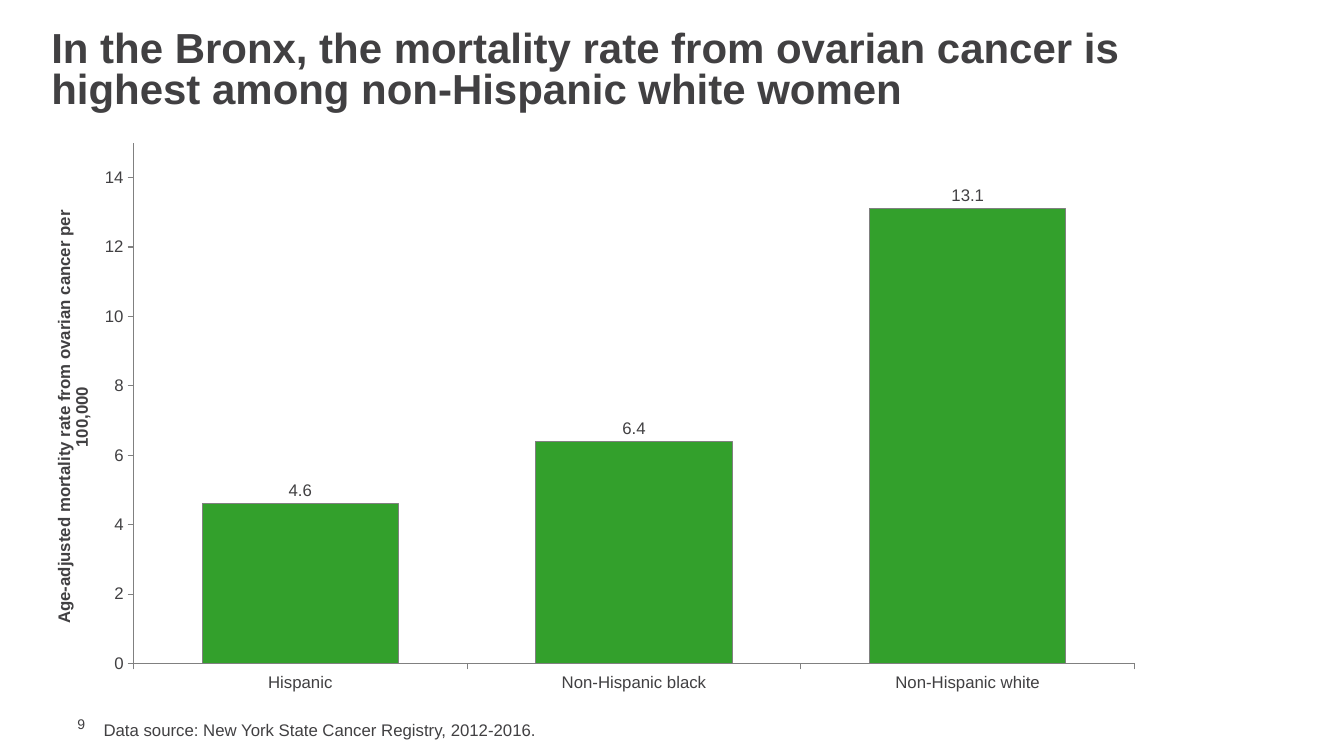
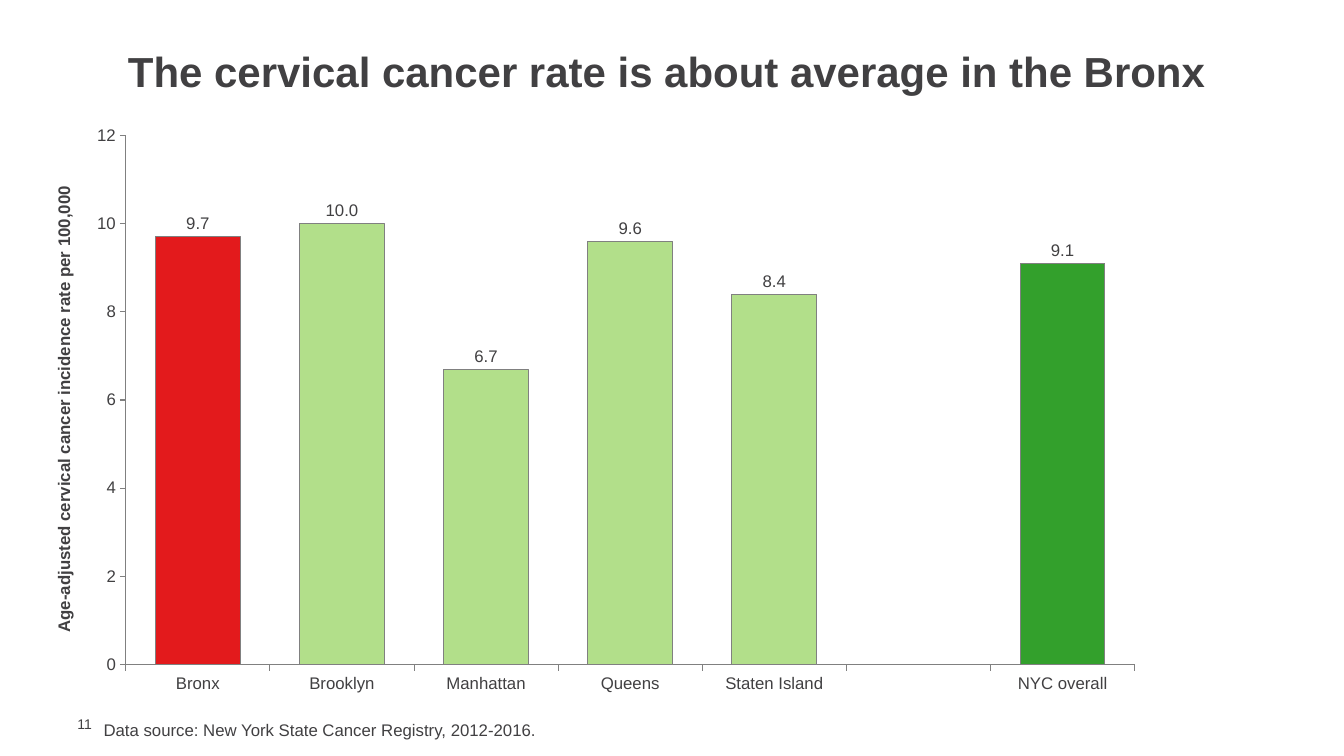
from pptx import Presentation
from pptx import util as u
from pptx.chart.data import CategoryChartData
from pptx.dml.color import RGBColor
from pptx.enum import chart as ch, text
from pptx.oxml import parse_xml
from pptx.oxml.ns import nsdecls, qn

INK = RGBColor(0x41, 0x40, 0x42)
GREY = RGBColor(0x80, 0x80, 0x80)
GREEN = RGBColor(0x33, 0xA0, 0x2C)
LIGHT_GREEN = RGBColor(0xB2, 0xDF, 0x8A)
RED = RGBColor(0xE3, 0x1A, 0x1C)
FONT = "Arial"
TITLE_ONLY = 5
SOURCE = "Data source: New York State Cancer Registry, 2012-2016."


class RateDeck:
    def __init__(self):
        self.deck = Presentation()
        self.deck.slide_width, self.deck.slide_height = u.Cm(33.87), u.Cm(19.05)
        self.page = None

    def style(self, font, size, bold=False):
        font.name, font.size, font.bold = FONT, u.Pt(size), bold
        font.color.rgb = INK

    def outline(self, line):
        line.color.rgb = GREY
        line.width = u.Pt(0.75)

    def fill_text(self, box, words, size, bold=False):
        frame = box.text_frame
        frame.word_wrap = True
        frame.auto_size = text.MSO_AUTO_SIZE.NONE
        para = frame.paragraphs[0]
        para.alignment = text.PP_ALIGN.LEFT
        span = para.add_run()
        span.text = words
        self.style(span.font, size, bold)
        return frame

    def text_box(self, words, place, size):
        box = self.page.shapes.add_textbox(*map(u.Cm, place))
        return self.fill_text(box, words, size)

    def start_page(self, number, title, title_place):
        """Add a page with its title, page number and data source."""
        layout = self.deck.slide_layouts[TITLE_ONLY]
        self.page = self.deck.slides.add_slide(layout)
        box = self.page.shapes.title
        box.left, box.top, box.width, box.height = map(u.Cm, title_place)
        frame = self.fill_text(box, title, 30, bold=True)
        frame.vertical_anchor = text.MSO_ANCHOR.MIDDLE
        frame.paragraphs[0].line_spacing = 0.8

        frame = self.text_box(str(number), (1.7, 18.03, 1.09, 0.43), 10)
        frame.vertical_anchor = text.MSO_ANCHOR.MIDDLE
        frame.margin_top = frame.margin_right = frame.margin_bottom = 0
        self.text_box(SOURCE, (2.36, 18.01, 25.2, 0.76), 12)

    def column_chart(self, axis_title, rates, top, plot_area, color, accents=None):
        """Draw the rates; accents maps a category to its own bar colour."""
        data = CategoryChartData(number_format="0.0")
        data.categories = list(rates)
        data.add_series("Series 1", list(rates.values()))
        chart = self.page.shapes.add_chart(
            ch.XL_CHART_TYPE.COLUMN_CLUSTERED,
            u.Cm(1.27), u.Cm(3.18), u.Cm(27.94), u.Cm(14.53), data).chart
        chart.has_legend = chart.has_title = False
        self.style(chart.font, 10)
        self.axes(chart, axis_title, top)
        self.place_plot(chart, plot_area)

        plot = chart.plots[0]
        plot.gap_width = 70
        plot.vary_by_categories = False
        series = plot.series[0]
        self.paint(series, color)
        for name, accent in (accents or {}).items():
            self.paint(series.points[list(rates).index(name)], accent)
        labels = series.data_labels
        labels.show_value = True
        labels.number_format, labels.number_format_is_linked = "0.0", False
        labels.position = ch.XL_LABEL_POSITION.OUTSIDE_END
        self.style(labels.font, 12)

    def paint(self, bar, color):
        bar.format.fill.solid()
        bar.format.fill.fore_color.rgb = color
        self.outline(bar.format.line)

    def axes(self, chart, axis_title, top):
        for axis in (chart.category_axis, chart.value_axis):
            axis.has_major_gridlines = False
            axis.major_tick_mark = ch.XL_TICK_MARK.OUTSIDE
            axis.minor_tick_mark = ch.XL_TICK_MARK.NONE
            self.outline(axis.format.line)
            self.style(axis.tick_labels.font, 12)
        axis = chart.value_axis
        axis.minimum_scale, axis.maximum_scale, axis.major_unit = 0, top, 2
        axis.tick_labels.number_format = "0"
        axis.tick_labels.number_format_is_linked = False
        span = axis.axis_title.text_frame.paragraphs[0].add_run()
        span.text = axis_title
        self.style(span.font, 12, bold=True)

    def place_plot(self, chart, plot_area):
        """Fix the inner plot area, given as fractions of the chart."""
        area = chart.element.find(".//" + qn("c:plotArea"))
        for old in area.findall(qn("c:layout")):
            area.remove(old)
        sizes = "".join(f'<c:{tag} val="{part}"/>'
                        for tag, part in zip("xywh", plot_area))
        area.insert(0, parse_xml(
            f'<c:layout {nsdecls("c")}><c:manualLayout>'
            '<c:layoutTarget val="inner"/><c:xMode val="edge"/>'
            f'<c:yMode val="edge"/>{sizes}</c:manualLayout></c:layout>'))


def main():
    rates = RateDeck()
    rates.start_page(
        9, "In the Bronx, the mortality rate from ovarian cancer is "
        "highest among non-Hispanic white women", (1.04, 0.66, 29.85, 2.31))
    rates.column_chart(
        "Age-adjusted mortality rate from ovarian cancer per 100,000",
        {"Hispanic": 4.6, "Non-Hispanic black": 6.4, "Non-Hispanic white": 13.1},
        15, (0.075, 0.029, 0.903, 0.903), GREEN)

    rates.start_page(
        11, "The cervical cancer rate is about average in the Bronx",
        (2.97, 1.27, 27.94, 1.27))
    rates.column_chart(
        "Age-adjusted cervical cancer incidence rate per 100,000",
        {"Bronx": 9.7, "Brooklyn": 10, "Manhattan": 6.7, "Queens": 9.6,
         "Staten Island": 8.4, "": None, "NYC overall": 9.1},
        12, (0.068, 0.016, 0.91, 0.918), LIGHT_GREEN,
        {"Bronx": RED, "NYC overall": GREEN})
    rates.deck.save("out.pptx")


if __name__ == "__main__":
    main()
